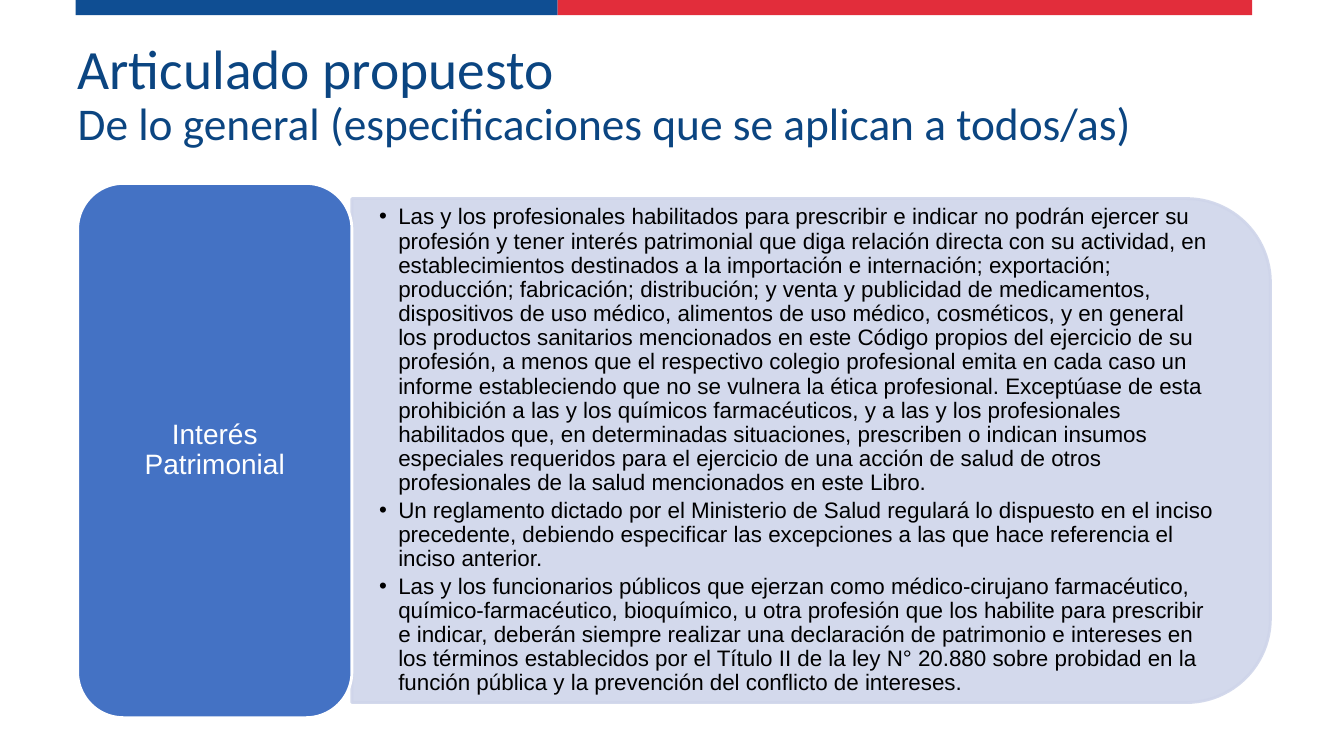
from dataclasses import dataclass

from lxml.etree import SubElement
from pptx import Presentation
from pptx.dml.color import RGBColor
from pptx.enum.shapes import MSO_SHAPE
from pptx.enum.text import MSO_ANCHOR, MSO_AUTO_SIZE, PP_ALIGN
from pptx.oxml.ns import qn
from pptx.util import Pt

EMU_PER_PX = 9144


@dataclass(frozen=True)
class Theme:
    """Colours, fonts and type sizes of the deck."""
    flag_blue: str = "0F4E93"
    flag_red: str = "E22D3B"
    title_blue: str = "0B4581"
    label_fill: str = "4472C4"
    panel_fill: str = "CFD5EA"
    white: str = "FFFFFF"
    black: str = "000000"
    title_font: str = "Calibri"
    body_font: str = "Arial"
    title_size: float = 39.6
    subtitle_size: float = 32.4
    label_size: int = 20
    body_size: int = 16


THEME = Theme()

ARTICLES = [
    [
        "Las y los profesionales habilitados para prescribir e indicar no podrán ejercer su profesión y tener "
        "interés patrimonial que diga relación directa con su actividad, en establecimientos destinados a la "
        "importación e internación; exportación; producción; fabricación; distribución; y venta y publicidad de "
        "medicamentos, dispositivos de uso médico, alimentos de uso médico, cosméticos, y en general los productos "
        "sanitarios mencionados en este Código propios del ejercicio de su profesión, a menos que el respectivo "
        "colegio profesional emita en cada caso un informe estableciendo que no se vulnera la ética profesional.",
        "Exceptúase de esta prohibición a las y los químicos farmacéuticos, y a las y los profesionales habilitados "
        "que, en determinadas situaciones, prescriben o indican insumos especiales requeridos para el ejercicio de "
        "una acción de salud de otros profesionales de la salud mencionados en este Libro.",
    ],
    [
        "Un reglamento dictado por el Ministerio de Salud regulará lo dispuesto en el inciso precedente, debiendo "
        "especificar las excepciones a las que hace referencia el inciso anterior.",
    ],
    [
        "Las y los funcionarios públicos que ejerzan como médico-cirujano farmacéutico, químico-farmacéutico, "
        "bioquímico, u otra profesión que los habilite para prescribir e indicar, deberán siempre realizar una "
        "declaración de patrimonio e intereses en los términos establecidos por el Título II de la ley N° 20.880 "
        "sobre probidad en la función pública y la prevención del conflicto de intereses.",
    ],
]


def px(length):
    """Turn px into EMU."""
    return round(length * EMU_PER_PX)


def set_frame(frame, horizontal, vertical):
    """Wrap and centre a text frame vertically, with the given insets."""
    frame.word_wrap = True
    frame.auto_size = MSO_AUTO_SIZE.NONE
    frame.vertical_anchor = MSO_ANCHOR.MIDDLE
    frame.margin_left = frame.margin_right = px(horizontal)
    frame.margin_top = frame.margin_bottom = px(vertical)


def write(para, text, size, color, font=THEME.body_font, align=PP_ALIGN.LEFT):
    """Add a formatted span to a paragraph."""
    para.alignment = align
    para.line_spacing = 0.9
    span = para.add_run()
    span.text = text
    span.font.name = font
    span.font.size = Pt(size)
    span.font.color.rgb = RGBColor.from_string(color)


def add_bullet(para, indent):
    """Give a paragraph a hanging round bullet."""
    properties = para._p.get_or_add_pPr()
    properties.set("marL", str(px(indent)))
    properties.set("indent", str(px(-indent)))
    bullet_color = SubElement(properties, qn("a:buClr"))
    SubElement(bullet_color, qn("a:srgbClr"), val=THEME.black)
    SubElement(properties, qn("a:buFont"), typeface=THEME.body_font)
    SubElement(properties, qn("a:buChar"), char="•")


def add_block(page, kind, box, fill, line=None, opacity=None):
    """Add a filled preset shape, with an optional outline and opacity in percent."""
    block = page.shapes.add_shape(kind, *map(px, box))
    block.shadow.inherit = False
    block.fill.solid()
    block.fill.fore_color.rgb = RGBColor.from_string(fill)
    if line:
        block.line.color.rgb = RGBColor.from_string(line)
        block.line.width = Pt(2)
    else:
        block.line.fill.background()
    if opacity:
        for color in block._element.spPr.iter(qn("a:srgbClr")):
            SubElement(color, qn("a:alpha"), val=str(opacity * 1000))
    return block


def add_flag_band(page, box):
    """Draw the blue and red band along the top."""
    left, top, width, height = box
    blue_width = 478
    add_block(page, MSO_SHAPE.RECTANGLE, (left, top, blue_width, height), THEME.flag_blue)
    add_block(page, MSO_SHAPE.RECTANGLE, (left + blue_width, top, width - blue_width, height), THEME.flag_red)


def add_title(page, box):
    """Place and fill the two-line title."""
    title = page.shapes.title
    title.left, title.top, title.width, title.height = map(px, box)
    set_frame(title.text_frame, 10, 5)
    para = title.text_frame.paragraphs[0]
    write(para, "Articulado propuesto", THEME.title_size, THEME.title_blue, THEME.title_font)
    para.add_line_break()
    write(para, "De lo general (especificaciones que se aplican a todos/as)",
          THEME.subtitle_size, THEME.title_blue, THEME.title_font)


def add_panel(page, box):
    """Draw the panel rounded on its right side and list the articles on it."""
    left, top, width, height = box
    shift = (width - height) / 2
    panel = add_block(page, MSO_SHAPE.ROUND_2_SAME_RECTANGLE, (left + shift, top - shift, height, width),
                      THEME.panel_fill, THEME.panel_fill, opacity=90)
    panel.rotation = 90
    articles = page.shapes.add_textbox(*map(px, (left, top + 24, width - 24, height - 48)))
    frame = articles.text_frame
    set_frame(frame, 27, 14)
    for index, sentences in enumerate(ARTICLES):
        para = frame.add_paragraph() if index else frame.paragraphs[0]
        add_bullet(para, 19)
        para.space_after = Pt(2.4)
        write(para, " ".join(sentences), THEME.body_size, THEME.black)


def add_label(page, box):
    """Draw the rounded label with its centred name."""
    label = add_block(page, MSO_SHAPE.ROUNDED_RECTANGLE, box, THEME.label_fill, THEME.white)
    set_frame(label.text_frame, 8, 4)
    write(label.text_frame.paragraphs[0], "Interés Patrimonial", THEME.label_size, THEME.white,
          align=PP_ALIGN.CENTER)


def add_topic(page, box):
    """Place a label and its panel side by side."""
    left, top, width, height = box
    label_width, inset = 272, 15
    add_panel(page, (left + label_width, top + inset, width - label_width, height - 2 * inset))
    add_label(page, (left, top, label_width, height))


def main():
    """Build and save the deck."""
    deck = Presentation()
    deck.slide_width, deck.slide_height = px(1333), px(750)
    page = deck.slides.add_slide(deck.slide_layouts[5])
    add_flag_band(page, (75, 0, 1167, 15))
    add_title(page, (67, 65, 1077, 60))
    add_topic(page, (77, 182, 1183, 530))
    deck.save("out.pptx")


if __name__ == "__main__":
    main()
